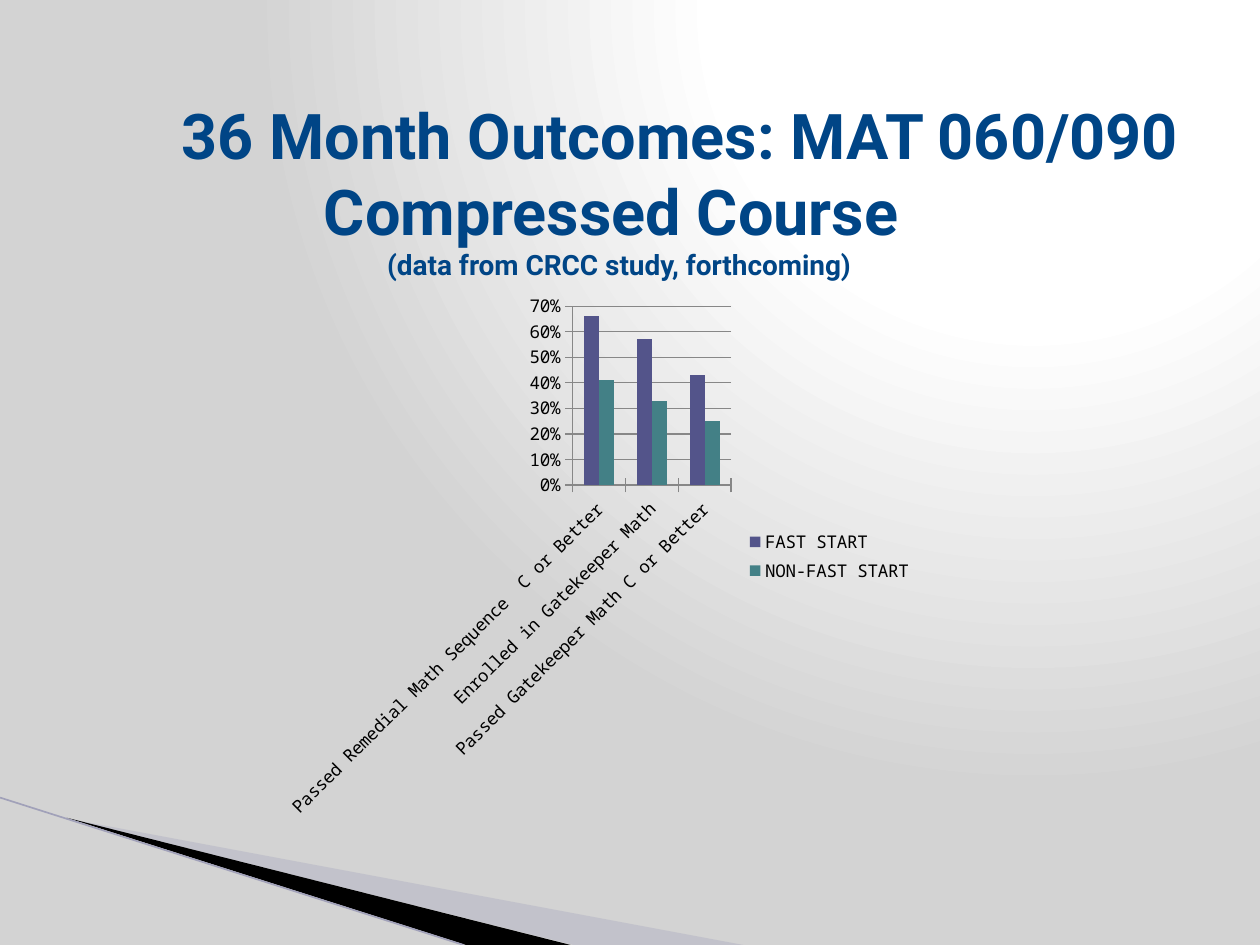
from pptx import Presentation
from pptx.chart.data import CategoryChartData
from pptx.dml.color import RGBColor
from pptx.enum.chart import XL_CHART_TYPE, XL_LEGEND_POSITION, XL_TICK_MARK
from pptx.enum.shapes import MSO_CONNECTOR
from pptx.enum.text import MSO_ANCHOR, PP_ALIGN
from pptx.oxml import parse_xml
from pptx.oxml.ns import nsdecls, qn
from pptx.util import Inches, Pt

COLUMN = XL_CHART_TYPE.COLUMN_CLUSTERED
RIGHT = XL_LEGEND_POSITION.RIGHT
CROSS = XL_TICK_MARK.CROSS
STRAIGHT = MSO_CONNECTOR.STRAIGHT
MIDDLE = MSO_ANCHOR.MIDDLE
CENTER = PP_ALIGN.CENTER

COLORS = {
    "white": "FFFFFF", "gray": "D3D3D3", "mist": "AAAABF", "black": "000000",
    "edge": "A1A1B9", "title": "004586", "fast": "53548A", "slow": "438086",
    "grid": "878787",
}


class Deck:
    """Holds the style and the current slide and draws each kind of element."""

    def __init__(self, slide):
        self.slide = slide
        self.shapes = slide.shapes
        self.head = "Roboto"
        self.mono = "Noto Sans Mono"

    def color(self, name):
        return RGBColor.from_string(COLORS[name])

    def backdrop(self, stops):
        marks = "".join(
            f'<a:gs pos="{at * 1000}"><a:srgbClr val="{COLORS[name]}"/></a:gs>'
            for at, name in stops)
        back = parse_xml(
            f'<p:bg {nsdecls("p", "a")}><p:bgPr><a:gradFill rotWithShape="1">'
            f'<a:gsLst>{marks}</a:gsLst><a:path path="circle">'
            '<a:fillToRect l="65000" b="98000"/></a:path></a:gradFill>'
            '<a:effectLst/></p:bgPr></p:bg>')
        self.slide.element.find(qn("p:cSld")).insert(0, back)

    def wedge(self, points, name, alpha=100):
        spots = [(Inches(x), Inches(y)) for x, y in points]
        form = self.shapes.build_freeform(*spots[0])
        form.add_line_segments(spots[1:], close=True)
        shape = form.convert_to_shape()
        shape.shadow.inherit = False
        shape.fill.solid()
        shape.fill.fore_color.rgb = self.color(name)
        shape.line.fill.background()
        if alpha < 100:
            tint = shape.element.spPr.find(qn("a:solidFill"))[0]
            tint.append(parse_xml(f'<a:alpha {nsdecls("a")} val="{alpha * 1000}"/>'))

    def line(self, start, end, name, width):
        ends = [Inches(n) for n in (*start, *end)]
        link = self.shapes.add_connector(STRAIGHT, *ends)
        link.line.color.rgb = self.color(name)
        link.line.width = Pt(width)
        link.element.spPr.append(parse_xml(f'<a:effectLst {nsdecls("a")}/>'))

    def title(self, box, text, sizes, indent):
        frame = self.shapes.add_textbox(*map(Inches, box)).text_frame
        frame.word_wrap = True
        frame.vertical_anchor = MIDDLE
        frame.text = text
        para = frame.paragraphs[0]
        para.alignment = CENTER
        props = para._p.get_or_add_pPr()
        props.set("marL", "0")
        props.set("indent", str(Inches(indent)))
        for run, size in zip(para.runs, sizes):
            run.font.name = self.head
            run.font.size = Pt(size)
            run.font.bold = True
            run.font.color.rgb = self.color("title")

    def chart(self, box, cats, series):
        data = CategoryChartData(number_format="0%")
        data.categories = cats
        for name, values, _ in series:
            data.add_series(name, values)
        chart = self.shapes.add_chart(COLUMN, *map(Inches, box), data).chart
        chart.has_title = False
        chart.font.name = self.mono
        chart.font.size = Pt(10)
        chart.font.color.rgb = self.color("black")
        chart.has_legend = True
        chart.legend.position = RIGHT
        chart.legend.include_in_layout = False
        plot = chart.plots[0]
        plot.vary_by_categories = False
        plot.gap_width = 150
        plot.overlap = 0
        for bars, (_, _, name) in zip(plot.series, series):
            bars.format.fill.solid()
            bars.format.fill.fore_color.rgb = self.color(name)
        for axis in (chart.category_axis, chart.value_axis):
            axis.major_tick_mark = CROSS
            axis.format.line.color.rgb = self.color("grid")
        scale = chart.value_axis
        scale.minimum_scale = 0
        scale.maximum_scale = 0.7
        scale.major_unit = 0.1
        scale.tick_labels.number_format = "0%"
        scale.tick_labels.number_format_is_linked = False
        scale.major_gridlines.format.line.color.rgb = self.color("grid")


def main():
    prs = Presentation()
    prs.slide_width = Inches(10)
    prs.slide_height = Inches(7.5)
    deck = Deck(prs.slides.add_slide(prs.slide_layouts[6]))
    deck.backdrop([(0, "white"), (40, "white"), (100, "gray")])
    deck.wedge([(0.55, 6.5), (5.9, 7.5), (4.55, 7.5)], "mist", 40)
    deck.wedge([(0.53, 6.49), (4.53, 7.5), (3.7, 7.5)], "black")
    deck.line((0, 6.33), (3.68, 7.5), "edge", 0.95)
    deck.title(
        (0.25, 0.67, 9.33, 1.66),
        "36 Month Outcomes: MAT 060/090 Compressed Course \v"
        "(data from CRCC study, forthcoming)",
        (36, 16), 0.97)
    deck.chart(
        (2.17, 2.25, 5.17, 4.33),
        ["Passed Remedial Math Sequence  C or Better",
         "Enrolled in Gatekeeper Math",
         "Passed Gatekeeper Math C or Better"],
        [("FAST START", (0.66, 0.57, 0.43), "fast"),
         ("NON-FAST START", (0.41, 0.33, 0.25), "slow")])
    prs.save("out.pptx")


if __name__ == "__main__":
    main()
